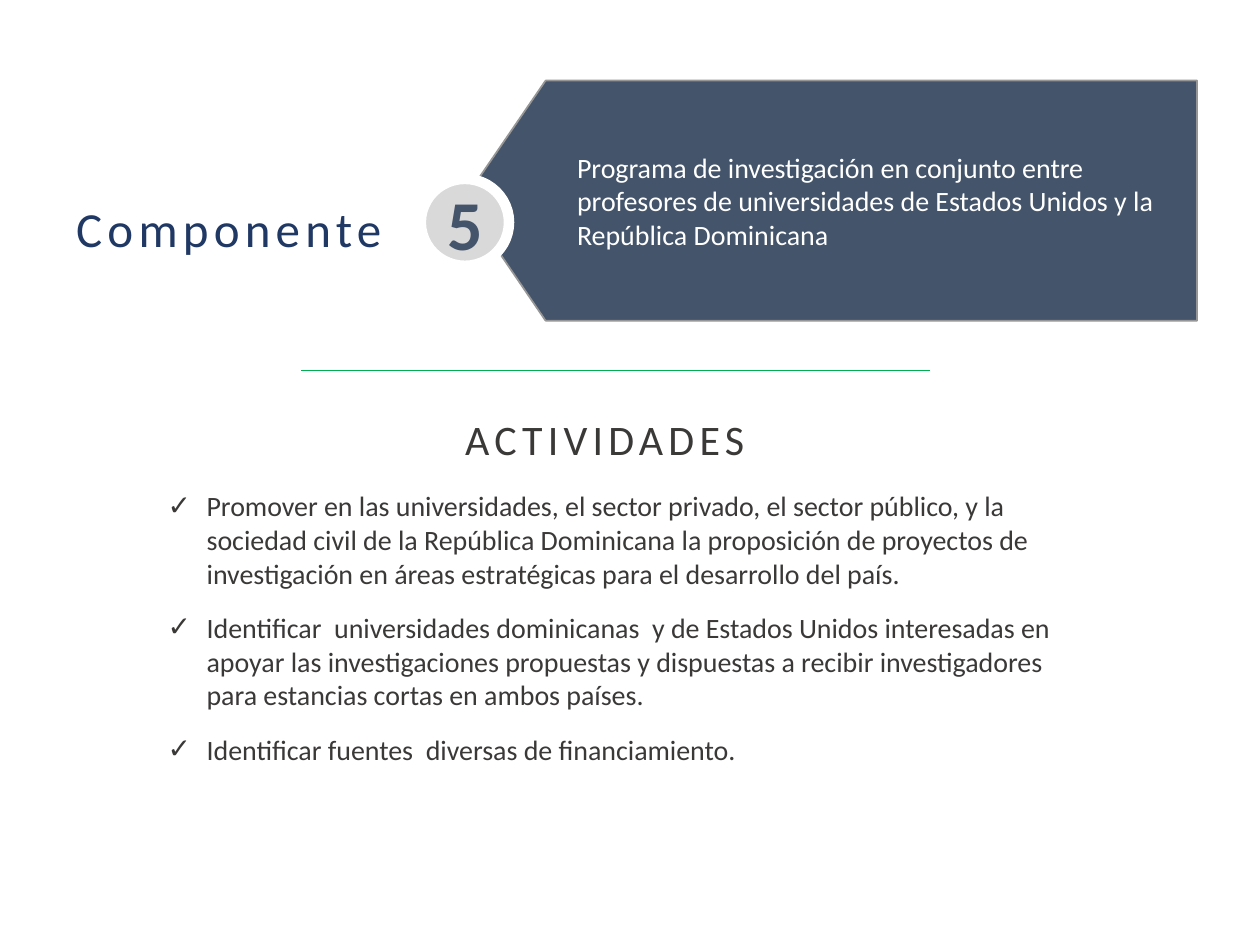
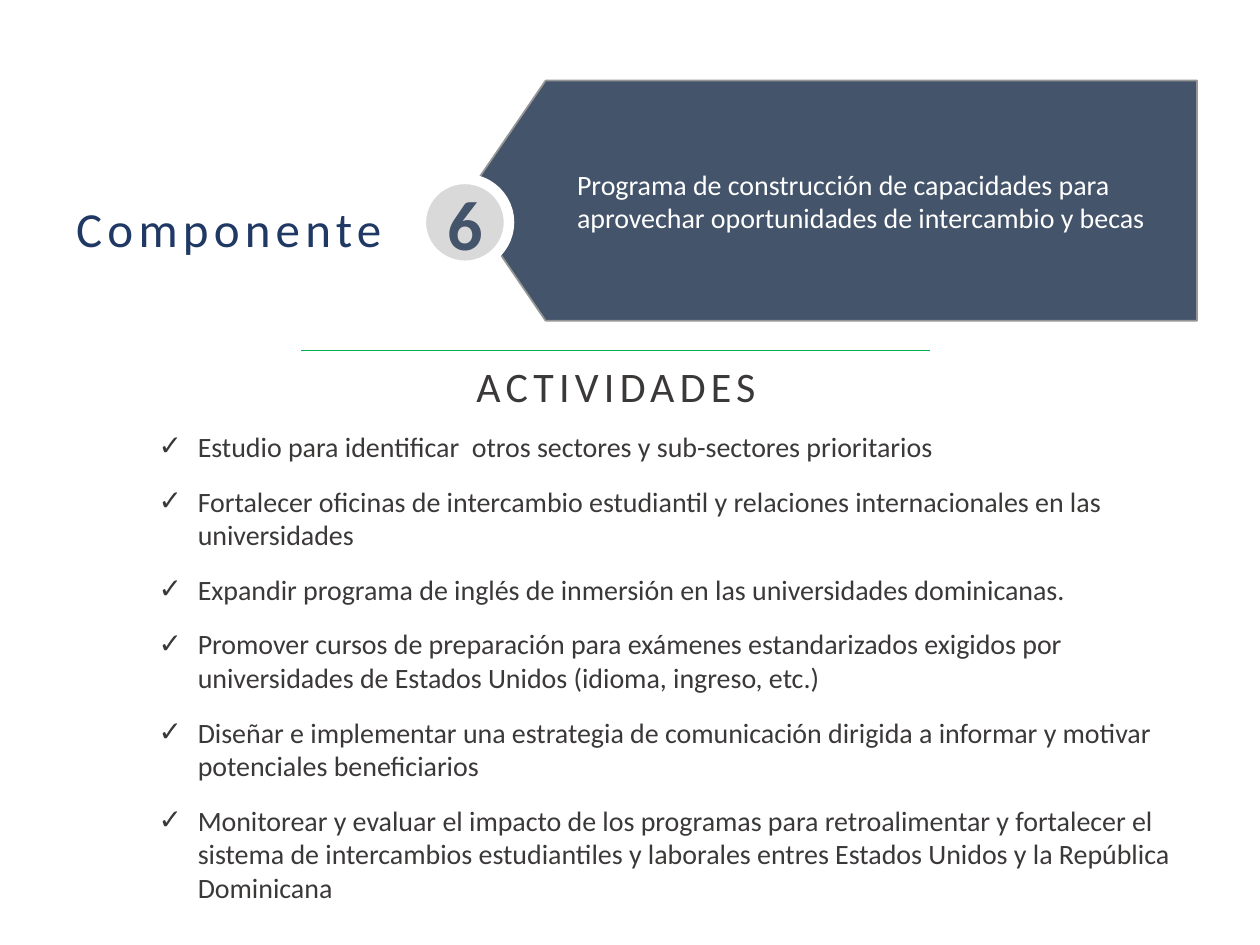
import pptx
import pptx.dml.color
import pptx.enum.shapes
import pptx.enum.text
import pptx.oxml
import pptx.oxml.ns
import pptx.util

Inches, Pt = pptx.util.Inches, pptx.util.Pt
MIDDLE = pptx.enum.text.MSO_ANCHOR.MIDDLE
CENTER = pptx.enum.text.PP_ALIGN.CENTER
AUTO_SIZE = pptx.enum.text.MSO_AUTO_SIZE
OVAL = pptx.enum.shapes.MSO_SHAPE.OVAL
STRAIGHT = pptx.enum.shapes.MSO_CONNECTOR.STRAIGHT

NAVY, SLATE, CHARCOAL = "203864", "44546A", "3B3838"
WHITE, PALE, LIGHT, GREY, GREEN = "FFFFFF", "E1E1E1", "D9D9D9", "969696", "00B050"

# Font formats, with the colour and the letter spacing kept beside them
COMPONENT_STYLE = ({"size": Pt(28), "bold": False}, NAVY, 3)
GAP_STYLE = ({"size": Pt(40), "bold": False}, NAVY, 3)
HEADING_STYLE = ({"size": Pt(24)}, CHARCOAL, 3)
NUMBER_STYLE = ({"size": Pt(40), "bold": True}, SLATE, 0)
PROGRAM_STYLE = ({"size": Pt(16)}, WHITE, 0)
ACTIVITY_STYLE = ({"size": Pt(16)}, CHARCOAL, 0)

# Frames are left, top, width, height in percent of the slide
COMPONENT_FRAME = (-24.1, 14.13, 86.2, 19.33)
RING_FRAME = (33.3, 18.67, 7.2, 9.07)
NUMBER_FRAME = (33.4, 18.93, 7, 9.2)
BANNER_OUTLINE = [(95, 33.93), (43.3, 33.93), (36.8, 21.2), (43.3, 8.53), (95, 8.53)]
RULE_LEFT, RULE_RIGHT = 23.9, 73.8
HEADING_SIZE = (51.6, 7.07)

COMPONENTS = [
    {
        "number": "5",
        "program": "Programa de investigación en conjunto entre profesores de "
                   "universidades de Estados Unidos y la República Dominicana",
        "rule_top": 39.2,
        "heading_corner": (22.2, 43.2),
        "activities_frame": (12.3, 51.07, 75.9, 49.87),
        "activities": [
            "Promover en las universidades, el sector privado, el sector público, y la "
            "sociedad civil de la República Dominicana la proposición de proyectos de "
            "investigación en áreas estratégicas para el desarrollo del país.",
            "Identificar  universidades dominicanas  y de Estados Unidos interesadas en "
            "apoyar las investigaciones propuestas y dispuestas a recibir investigadores "
            "para estancias cortas en ambos países.",
            "Identificar fuentes  diversas de financiamiento.",
        ],
    },
    {
        "number": "6",
        "program": "Programa de construcción de capacidades para aprovechar "
                   "oportunidades de intercambio y becas",
        "rule_top": 37.07,
        "heading_corner": (23.1, 37.6),
        "activities_frame": (11.6, 44.8, 82.7, 67.33),
        "activities": [
            "Estudio para identificar  otros sectores y sub-sectores prioritarios",
            "Fortalecer oficinas de intercambio estudiantil y relaciones internacionales "
            "en las universidades",
            "Expandir programa de inglés de inmersión en las universidades dominicanas.",
            "Promover cursos de preparación para exámenes estandarizados exigidos por "
            "universidades de Estados Unidos (idioma, ingreso, etc.)",
            "Diseñar e implementar una estrategia de comunicación dirigida a informar y "
            "motivar potenciales beneficiarios",
            "Monitorear y evaluar el impacto de los programas para retroalimentar y "
            "fortalecer el sistema de intercambios estudiantiles y laborales entres "
            "Estados Unidos y la República Dominicana",
        ],
    },
]

deck = pptx.Presentation()
deck.slide_width, deck.slide_height = Inches(10), Inches(7.5)


def share(*percents):
    """Turn alternating x and y percentages of the slide into lengths."""
    sides = (deck.slide_width, deck.slide_height)
    return [round(percent * sides[i % 2] / 100) for i, percent in enumerate(percents)]


def paint(fill, colour):
    fill.solid()
    fill.fore_color.rgb = pptx.dml.color.RGBColor.from_string(colour)


for component in COMPONENTS:
    slide = deck.slides.add_slide(deck.slide_layouts[1])
    shapes = slide.shapes
    title, activities = slide.placeholders

    # Banner and number badge
    corners = [share(*corner) for corner in BANNER_OUTLINE]
    outline = shapes.build_freeform(*corners[0], scale=1.0)
    outline.add_line_segments(corners[1:], close=True)
    banner = outline.convert_to_shape()
    ring = shapes.add_shape(OVAL, *share(*RING_FRAME))
    badge = shapes.add_shape(OVAL, *share(*NUMBER_FRAME))
    for part, fill, edge, weight in [(banner, SLATE, GREY, 1), (ring, PALE, GREY, 1),
                                     (badge, LIGHT, WHITE, 6)]:
        part.shadow.inherit = False
        paint(part.fill, fill)
        paint(part.line.fill, edge)
        part.line.width = Pt(weight)

    # Rule above the activities
    rule = shapes.add_connector(STRAIGHT, *share(RULE_LEFT, component["rule_top"],
                                                 RULE_RIGHT, component["rule_top"]))
    paint(rule.line.fill, GREEN)
    rule.line.width = Pt(0.5)
    rule._element.spPr.append(pptx.oxml.parse_xml(
        f'<a:effectLst {pptx.oxml.ns.nsdecls("a")}/>'))

    heading = shapes.add_textbox(*share(*component["heading_corner"], *HEADING_SIZE))
    for holder, frame in [(title, COMPONENT_FRAME),
                          (activities, component["activities_frame"])]:
        holder.left, holder.top, holder.width, holder.height = share(*frame)

    # Text frames
    centred = {"alignment": CENTER}
    tight = {"alignment": CENTER, "line_spacing": 0.9}
    boxed = {"word_wrap": True, "vertical_anchor": MIDDLE, "auto_size": AUTO_SIZE.NONE}
    inset = {"margin_left": Inches(0.9), "margin_right": Inches(0.11),
             "margin_top": Inches(0.06), "margin_bottom": Inches(0.06)}
    for part, frame_format, paragraph_format in [
            (title, boxed, tight), (heading, boxed, tight), (badge, boxed, centred),
            (banner, boxed | inset, {"alignment": pptx.enum.text.PP_ALIGN.LEFT}),
            (activities, {"word_wrap": True, "auto_size": AUTO_SIZE.SHAPE_TO_FIT_TEXT}, {})]:
        for name, value in frame_format.items():
            setattr(part.text_frame, name, value)
        for name, value in paragraph_format.items():
            setattr(part.text_frame.paragraphs[0], name, value)

    texts = [(part.text_frame.paragraphs[0], text, style) for part, text, style in [
        (title, "Componente", COMPONENT_STYLE), (title, " ", GAP_STYLE),
        (heading, "ACTIVIDADES", HEADING_STYLE),
        (badge, component["number"], NUMBER_STYLE),
        (banner, component["program"], PROGRAM_STYLE)]]

    # Checked list
    for position, activity in enumerate(component["activities"]):
        body = activities.text_frame
        item = body.add_paragraph() if position else body.paragraphs[0]
        item.space_before, item.space_after = Pt(0), Pt(12)
        properties = item._p.get_or_add_pPr()
        properties.set("marL", str(Inches(0.31)))
        properties.set("indent", str(-Inches(0.31)))
        for tag, attribute in [("buFont", 'typeface="Calibri"'), ("buChar", 'char="✓"')]:
            properties.append(pptx.oxml.parse_xml(
                f'<a:{tag} {pptx.oxml.ns.nsdecls("a")} {attribute}/>'))
        texts.append((item, activity, ACTIVITY_STYLE))

    for paragraph, text, (font_format, colour, spacing) in texts:
        run = paragraph.add_run()
        run.text = text
        for name, value in ({"name": "Calibri"} | font_format).items():
            setattr(run.font, name, value)
        paint(run.font.fill, colour)
        if spacing:
            run._r.get_or_add_rPr().set("spc", str(spacing * 100))

deck.save("out.pptx")
